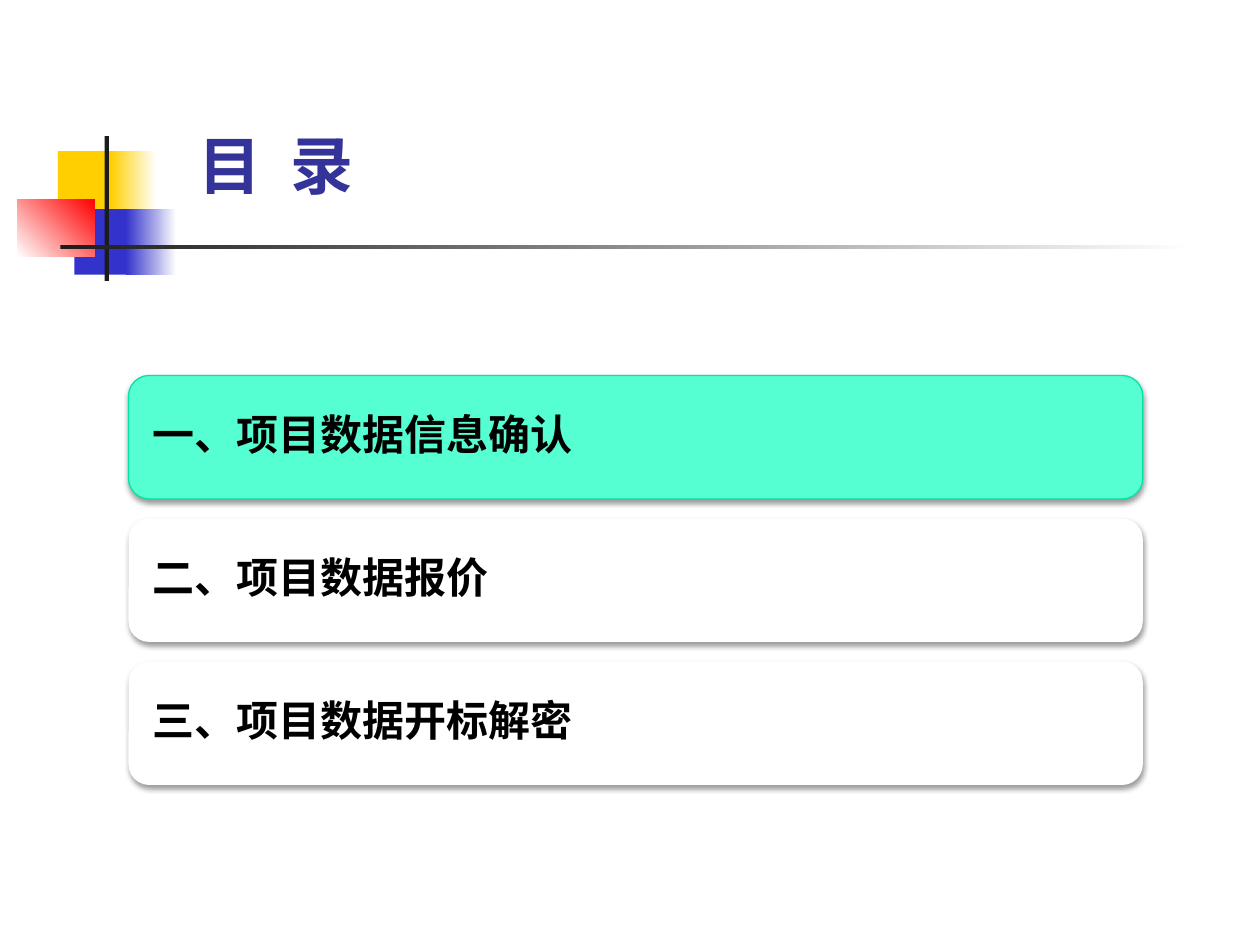
from typing import NamedTuple

from lxml.etree import SubElement as Sub
from pptx import Presentation
from pptx.dml.color import RGBColor as Rgb
from pptx.enum.shapes import MSO_SHAPE as Kind
from pptx.enum.text import MSO_ANCHOR as Anchor
from pptx.oxml.ns import qn
from pptx.util import Inches, Pt

HUES = {
    "white": "FFFFFF", "black": "000000", "ink": "1C1C1C",
    "gold": "FFCF01", "blue": "3333CC", "red": "FF0000",
    "title": "333399", "mint": "56FFD2", "edge": "00E4A8",
}
WIDE, HIGH = Inches(10), Inches(7.5)
COLS, ROWS = 100, 75  # the slide as a grid of square cells
CJK = "Noto Sans CJK SC"


class Box(NamedTuple):
    col: float
    row: float
    cols: float
    rows: float


class Block(NamedTuple):
    box: Box
    hue: str
    fade: str = ""  # second colour of a gradient
    angle: int = 0


class Card(NamedTuple):
    text: str
    fill: str = "white"
    edge: str = ""


# Corner ornament, from back to front
BLOCKS = [
    Block(Box(4.6, 12, 4.8, 5.2), "gold"),
    Block(Box(8.8, 12, 3.6, 5.2), "gold", "white"),
    Block(Box(5.9, 16.6, 4.6, 5.2), "blue"),
    Block(Box(10, 16.6, 4, 5.2), "blue", "white"),
    Block(Box(1.4, 15.8, 6.1, 4.6), "white", "red", 45),
    Block(Box(8.3, 10.8, 0.35, 11.5), "ink"),
    Block(Box(4.8, 19.45, 90, 0.35), "ink", "white"),
]
CARDS = [
    Card("一、项目数据信息确认", "mint", "edge"),
    Card("二、项目数据报价"),
    Card("三、项目数据开标解密"),
]
FIRST = Box(10.2, 29.8, 80.5, 9.8)
STEP = 11.35  # rows from one card to the next


def rgb(hue: str) -> Rgb:
    return Rgb.from_string(HUES[hue])


def place(box: Box) -> tuple[int, ...]:
    """Turn grid cells into slide lengths."""
    wide, high = WIDE / COLS, HIGH / ROWS
    return (round(box.col * wide), round(box.row * high),
            round(box.cols * wide), round(box.rows * high))


def write(shape, text: str, *, size: float, hue: str, font: str,
          inset: float = 0.1, track: float = 0, lead: float = 1) -> None:
    """Put one bold line, centred in height, into a shape."""
    frame = shape.text_frame
    frame.word_wrap = True
    frame.vertical_anchor = Anchor.MIDDLE
    frame.margin_left = frame.margin_right = Inches(inset)
    para = frame.paragraphs[0]
    para.line_spacing = lead
    para.alignment = 1  # left
    run = para.add_run()
    run.text = text
    run.font.size, run.font.bold, run.font.name = Pt(size), True, font
    run.font.color.rgb = rgb(hue)
    props = run.font._element
    props.set("spc", str(round(track * 100)))
    Sub(props, qn("a:ea"), typeface=CJK)


def shade(shape) -> None:
    """Add a soft shadow straight below the shape."""
    effects = shape._element.spPr.find(qn("a:effectLst"))
    outer = Sub(effects, qn("a:outerShdw"), blurRad=str(Pt(3.1)),
                dist=str(Pt(1.6)), dir="5400000", rotWithShape="0")
    tone = Sub(outer, qn("a:srgbClr"), val=HUES["black"])
    Sub(tone, qn("a:alpha"), val="38000")


def draw_block(slide, block: Block) -> None:
    shape = slide.shapes.add_shape(Kind.RECTANGLE, *place(block.box))
    shape.shadow.inherit = False
    shape.line.fill.background()
    if block.fade:
        shape.fill.gradient()
        shape.fill.gradient_angle = block.angle
        for stop, hue in zip(shape.fill.gradient_stops, (block.hue, block.fade)):
            stop.color.rgb = rgb(hue)
    else:
        shape.fill.solid()
        shape.fill.fore_color.rgb = rgb(block.hue)


def draw_card(slide, card: Card, box: Box) -> None:
    shape = slide.shapes.add_shape(Kind.ROUNDED_RECTANGLE, *place(box))
    shape.fill.solid()
    shape.fill.fore_color.rgb = rgb(card.fill)
    if card.edge:
        shape.line.color.rgb = rgb(card.edge)
        shape.line.width = Pt(0.75)
    else:
        shape.line.fill.background()
    shape.shadow.inherit = False
    shade(shape)
    write(shape, card.text, size=24, hue="black", font="Lato",
          inset=0.14, lead=0.9)


def main() -> None:
    deck = Presentation()
    deck.slide_width, deck.slide_height = WIDE, HIGH
    slide = deck.slides.add_slide(deck.slide_layouts[6])

    for block in BLOCKS:
        draw_block(slide, block)

    # Title, tracked wide
    title = slide.shapes.add_textbox(*place(Box(14.8, 6.8, 80.5, 12.5)))
    write(title, "目 录", size=36, hue="title", font=CJK, track=4)

    # Contents
    for i, card in enumerate(CARDS):
        draw_card(slide, card, FIRST._replace(row=FIRST.row + i * STEP))

    deck.save("out.pptx")


if __name__ == "__main__":
    main()
